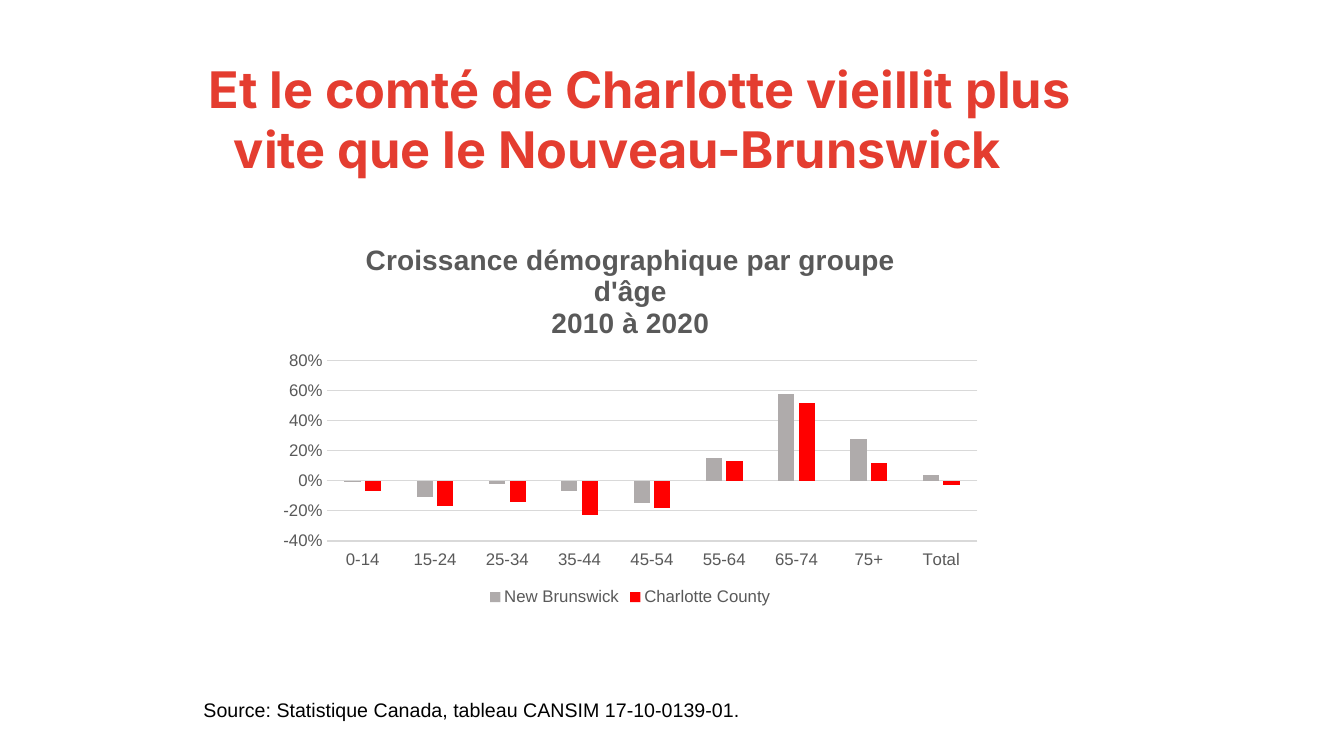
from lxml import etree
from pptx import Presentation
from pptx import util as u
from pptx.chart.data import CategoryChartData
from pptx.dml.color import RGBColor
from pptx.enum import chart as ch, text
from pptx.oxml import ns

RED = RGBColor(0xE4, 0x3D, 0x30)
BRIGHT_RED = RGBColor(0xFF, 0x00, 0x00)
WARM_GREY = RGBColor(0xAF, 0xAB, 0xAB)
DARK_GREY = RGBColor(0x59, 0x59, 0x59)
LIGHT_GREY = RGBColor(0xD9, 0xD9, 0xD9)
BLACK = RGBColor(0, 0, 0)

AGES = ["0-14", "15-24", "25-34", "35-44", "45-54", "55-64", "65-74", "75+", "Total"]
GROWTH = [
    ("New Brunswick", WARM_GREY,
     [-0.01, -0.11, -0.02, -0.07, -0.15, 0.15, 0.58, 0.28, 0.04]),
    ("Charlotte County", BRIGHT_RED,
     [-0.07, -0.17, -0.14, -0.23, -0.18, 0.13, 0.52, 0.12, -0.03]),
]


def format_font(font, name="Arial", size=12, color=DARK_GREY, bold=False):
    font.name = name
    font.size = u.Pt(size)
    font.bold = bold
    font.color.rgb = color


def write(p, content, **fmt):
    r = p.add_run()
    r.text = content
    format_font(r.font, **fmt)


class Deck:
    def __init__(self, width=13.33, height=7.5):
        self.prs = Presentation()
        self.prs.slide_width = u.Inches(width)
        self.prs.slide_height = u.Inches(height)
        self.s = self.prs.slides.add_slide(self.prs.slide_layouts[5])

    def box(self, x, y, w, h):
        width, height = self.prs.slide_width, self.prs.slide_height
        return [int(v) for v in (x * width, y * height, w * width, h * height)]

    def title(self, content, area):
        sp = self.s.shapes.title
        sp.left, sp.top, sp.width, sp.height = self.box(*area)
        tf = sp.text_frame
        tf.word_wrap = True
        tf.auto_size = text.MSO_AUTO_SIZE.NONE
        tf.vertical_anchor = text.MSO_ANCHOR.TOP
        p = tf.paragraphs[0]
        p.alignment = text.PP_ALIGN.LEFT
        p.line_spacing = 1.0
        pPr = p._p.get_or_add_pPr()
        pPr.set("marL", str(u.Inches(0.5)))
        pPr.set("indent", str(u.Inches(-0.25)))
        write(p, content, name="Inter", size=36, color=RED, bold=True)

    def label(self, content, area, **fmt):
        tf = self.s.shapes.add_textbox(*self.box(*area)).text_frame
        tf.word_wrap = True
        write(tf.paragraphs[0], content, **fmt)

    def columns(self, heading, cats, series, area, plot_area):
        data = CategoryChartData(number_format="0%")
        data.categories = cats
        for name, _, values in series:
            data.add_series(name, values)
        chart = self.s.shapes.add_chart(
            ch.XL_CHART_TYPE.COLUMN_CLUSTERED, *self.box(*area), data).chart
        format_font(chart.font, size=10, color=BLACK)

        tf = chart.chart_title.text_frame
        for i, line in enumerate(heading):
            p = tf.add_paragraph() if i else tf.paragraphs[0]
            write(p, line, size=20, bold=True)
        chart.chart_title.include_in_layout = False

        plot = chart.plots[0]
        plot.gap_width, plot.overlap, plot.vary_by_categories = 219, -27, False
        for ser, (_, color, _) in zip(plot.series, series):
            ser.invert_if_negative = False
            ser.format.fill.solid()
            ser.format.fill.fore_color.rgb = color

        self.axes(chart)
        chart.has_legend = True
        chart.legend.position = ch.XL_LEGEND_POSITION.BOTTOM
        chart.legend.include_in_layout = False
        format_font(chart.legend.font)
        self.place_plot(chart, plot_area)

    def axes(self, chart):
        cat, val = chart.category_axis, chart.value_axis
        for axis in (cat, val):
            axis.major_tick_mark = axis.minor_tick_mark = ch.XL_TICK_MARK.NONE
            format_font(axis.tick_labels.font)
        cat.tick_label_position = ch.XL_TICK_LABEL_POSITION.LOW
        val.minimum_scale, val.maximum_scale, val.major_unit = -0.4, 0.8, 0.2
        val.tick_labels.number_format = "0%"
        val.tick_labels.number_format_is_linked = False
        val.format.line.fill.background()
        for line in (cat.format.line, val.major_gridlines.format.line):
            line.color.rgb = LIGHT_GREY
            line.width = u.Pt(0.75)

    def place_plot(self, chart, plot_area):
        plot = chart._chartSpace.find(".//" + ns.qn("c:plotArea"))
        for old in plot.findall(ns.qn("c:layout")):
            plot.remove(old)
        layout = etree.Element(ns.qn("c:layout"))
        manual = etree.SubElement(layout, ns.qn("c:manualLayout"))
        settings = [("layoutTarget", "inner"), ("xMode", "edge"), ("yMode", "edge")]
        for tag, value in settings + list(zip("xywh", plot_area)):
            etree.SubElement(manual, ns.qn("c:" + tag)).set("val", str(value))
        plot.insert(0, layout)


def main():
    deck = Deck()
    deck.title("Et le comté de Charlotte vieillit plus vite que le Nouveau-Brunswick",
               (0.129, 0.07, 0.728, 0.207))
    deck.label("Source: Statistique Canada, tableau CANSIM 17-10-0139-01.",
               (0.144, 0.917, 0.702, 0.045), size=14, color=BLACK)
    deck.columns(["Croissance démographique par groupe d'âge", "2010 à 2020"],
                 AGES, GROWTH, (0.2, 0.3, 0.538, 0.507), (0.08, 0.35, 0.9, 0.47))
    deck.prs.save("out.pptx")


if __name__ == "__main__":
    main()
